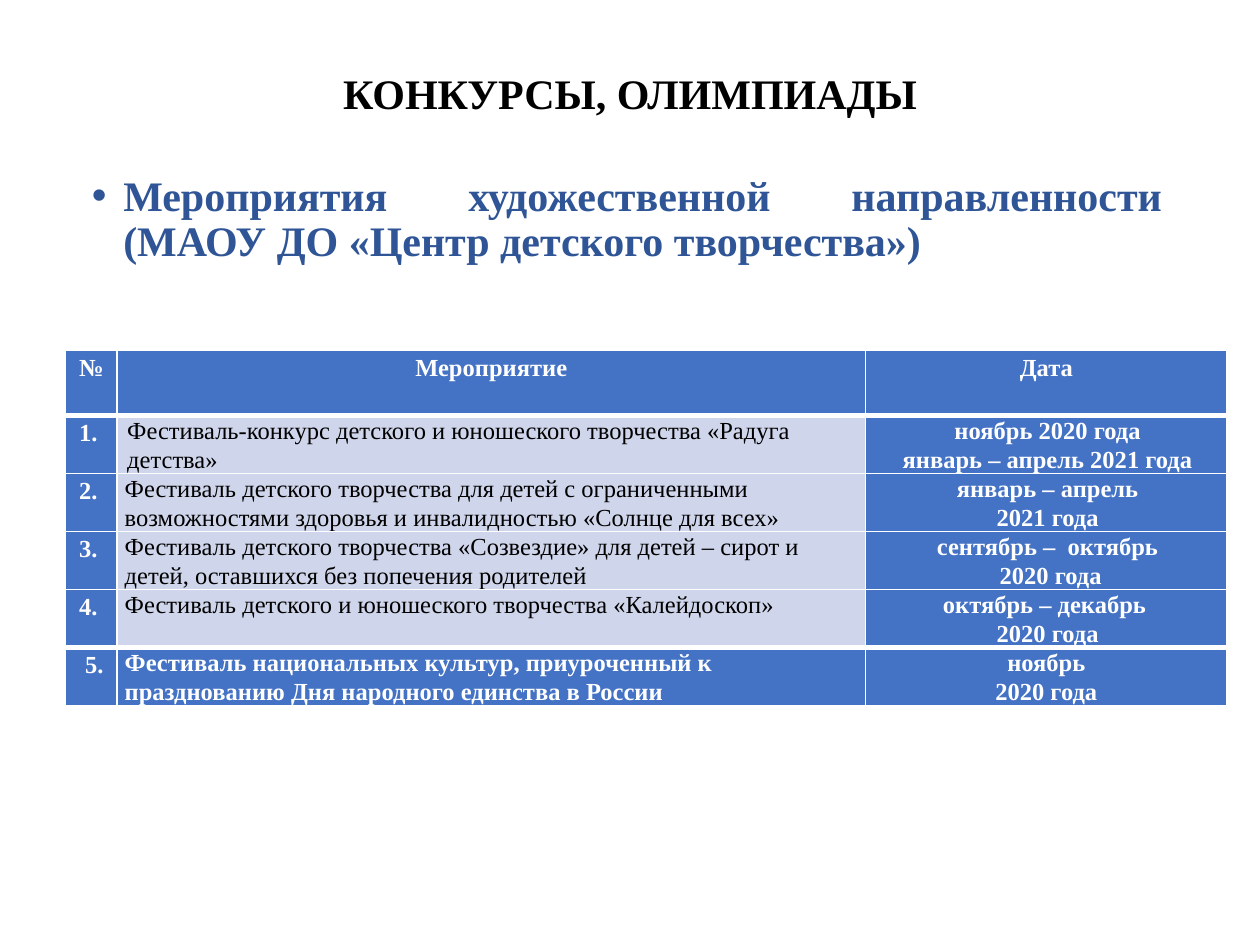
"""Build a slide listing arts contests and festivals with their dates."""
import pptx
import pptx.dml.color
import pptx.enum.text
import pptx.oxml
import pptx.oxml.ns
import pptx.util
from lxml import etree

Inches = pptx.util.Inches
Pt = pptx.util.Pt
ALIGN = pptx.enum.text.PP_ALIGN
ANCHOR = pptx.enum.text.MSO_ANCHOR

COLORS = {"white": "FFFFFF", "black": "000000", "blue": "4472C4",
          "pale": "CFD5EA", "heading": "2F5597"}
TITLE = "КОНКУРСЫ, ОЛИМПИАДЫ"
SUBTITLE = "Мероприятия художественной направленности (МАОУ ДО «Центр детского творчества»)"
ROWS = [
    ("№", "Мероприятие", "Дата"),
    ("1. ", "Фестиваль-конкурс детского и юношеского творчества «Радуга детства»",
     "ноябрь 2020 года\nянварь – апрель 2021 года"),
    ("2. ", "Фестиваль детского творчества для детей с ограниченными возможностями "
     "здоровья и инвалидностью «Солнце для всех»", "январь – апрель\n2021 года"),
    ("3. ", "Фестиваль детского творчества «Созвездие» для детей – сирот и детей, "
     "оставшихся без попечения родителей", "сентябрь –  октябрь\n 2020 года"),
    ("4. ", "Фестиваль детского и юношеского творчества «Калейдоскоп»",
     "октябрь – декабрь \n2020 года"),
    (" 5.", "Фестиваль национальных культур, приуроченный к празднованию "
     "Дня народного единства в России", "ноябрь\n2020 года"),
]
COL_WIDTHS = (0.41, 5.94, 2.87)
HEADER_HEIGHT, ROW_HEIGHT = 0.52, 0.46


def write(tf, text, size=14, color="white", bold=True, align=ALIGN.CENTER,
          spacing=1.0, indent=0, hanging=0, bullet=None):
    """Fill a text frame, one paragraph for each line of text."""
    tf.word_wrap = True
    for i, line in enumerate(text.split("\n")):
        p = tf.paragraphs[0] if i == 0 else tf.add_paragraph()
        p.alignment, p.line_spacing, p.space_before = align, spacing, Pt(0)
        pPr = p._p.get_or_add_pPr()
        if indent:
            pPr.set("marL", str(Inches(indent)))
            pPr.set("indent", str(-Inches(hanging)))
        if bullet:
            font = etree.SubElement(pPr, pptx.oxml.ns.qn("a:buFont"))
            font.set("typeface", "Arial")
            etree.SubElement(pPr, pptx.oxml.ns.qn("a:buChar")).set("char", bullet)
        r = p.add_run()
        r.text = line
        r.font.name, r.font.size, r.font.bold = "Times New Roman", Pt(size), bold
        r.font.color.rgb = pptx.dml.color.RGBColor.from_string(COLORS[color])


def set_borders(cell, top=1, bottom=1):
    """Draw white borders of the given widths in points."""
    tcPr = cell._tc.get_or_add_tcPr()
    for side, width in (("L", 1), ("R", 1), ("T", top), ("B", bottom)):
        tcPr.append(pptx.oxml.parse_xml(
            f'<a:ln{side} {pptx.oxml.ns.nsdecls("a")} w="{Pt(width)}"><a:solidFill>'
            f'<a:srgbClr val="{COLORS["white"]}"/></a:solidFill></a:ln{side}>'))


def add_schedule(s):
    """Add the table of events."""
    last = len(ROWS) - 1
    heights = [HEADER_HEIGHT] + [ROW_HEIGHT] * last
    table = s.shapes.add_table(len(ROWS), len(COL_WIDTHS), Inches(0.52), Inches(2.78),
                               Inches(sum(COL_WIDTHS)), Inches(sum(heights))).table
    for column, width in zip(table.columns, COL_WIDTHS):
        column.width = Inches(width)
    for i, row in enumerate(ROWS):
        table.rows[i].height = Inches(heights[i])
        for j, text in enumerate(row):
            cell = table.cell(i, j)
            cell.margin_left = cell.margin_right = Inches(0.06)
            cell.margin_top = cell.margin_bottom = 0
            set_borders(cell, top=3 if i in (1, last) else 1,
                        bottom=3 if i in (0, last - 1) else 1)
            event = j == 1 and 0 < i < last
            cell.fill.solid()
            cell.fill.fore_color.rgb = pptx.dml.color.RGBColor.from_string(
                COLORS["pale" if event else "blue"])
            indented = (j == 2 and 0 < i < last) or (i, j) == (1, 1)
            write(cell.text_frame, text, color="black" if event else "white",
                  bold=not event, align=ALIGN.LEFT if j == 1 and i else ALIGN.CENTER,
                  spacing=1.15 if i == 0 or j == 0 else 1.07,
                  indent=0.02 if indented else 0)


def main():
    """Build and save the slide."""
    prs = pptx.Presentation()
    prs.slide_width, prs.slide_height = Inches(10), Inches(7.5)
    s = prs.slides.add_slide(prs.slide_layouts[5])
    add_schedule(s)
    sp = s.shapes.add_textbox(Inches(0.63), Inches(1.34), Inches(8.69), Inches(2.03))
    write(sp.text_frame, SUBTITLE, size=24, color="heading", align=ALIGN.JUSTIFY,
          spacing=0.9, indent=0.25, hanging=0.25, bullet="•")
    title = s.shapes.title
    title.left, title.top = Inches(0.69), Inches(0.4)
    title.width, title.height = Inches(8.62), Inches(0.72)
    title.text_frame.vertical_anchor = ANCHOR.MIDDLE
    write(title.text_frame, TITLE, size=24, color="black", spacing=0.9)
    prs.save("out.pptx")


if __name__ == "__main__":
    main()
